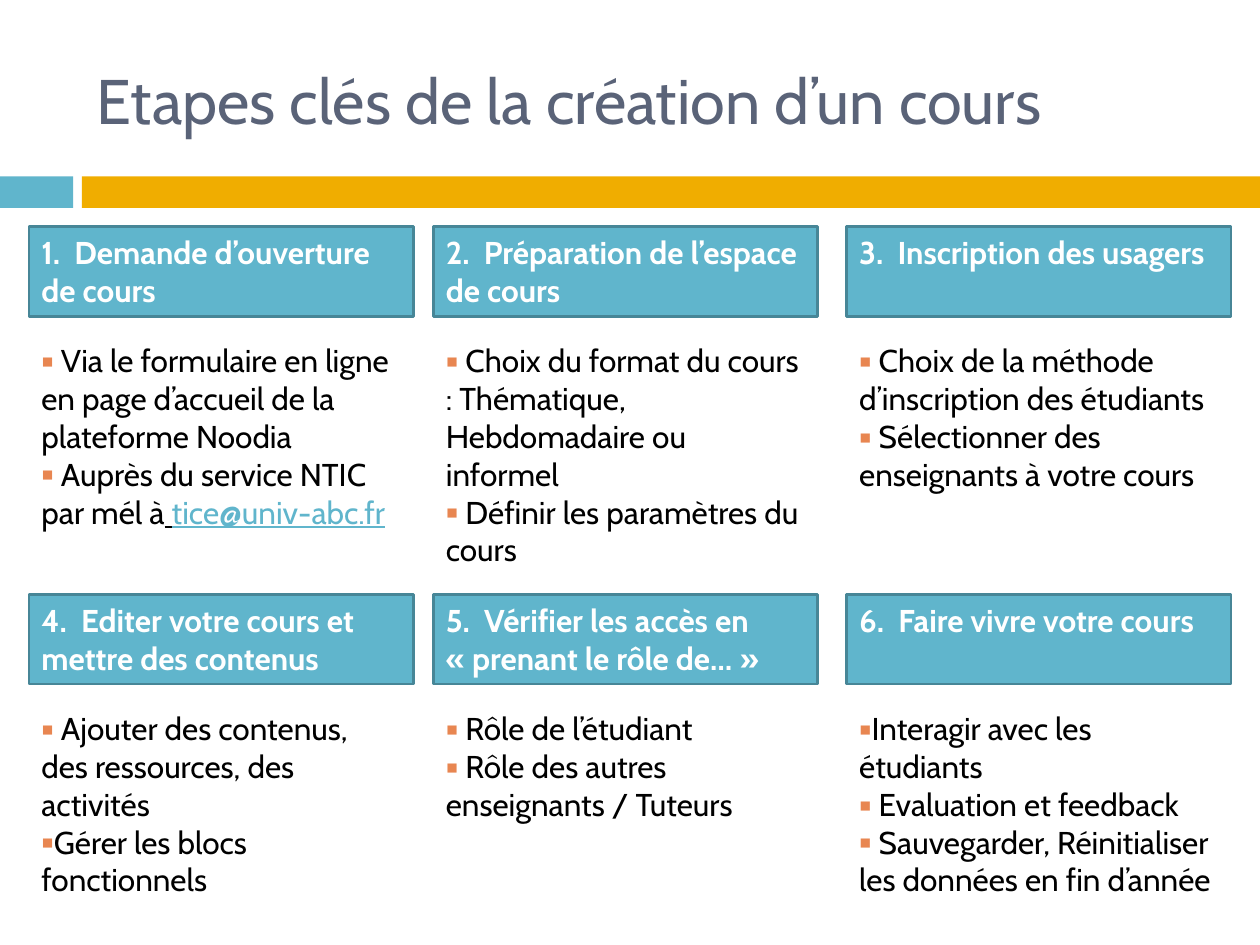
from lxml import etree
from pptx import Presentation
from pptx import util as u
from pptx.dml.color import RGBColor
from pptx.enum import shapes, text
from pptx.oxml.ns import qn

FONT = "Cabin"
COLORS = {
    "blue": "60B5CC", "blue_edge": "478697", "gold": "F0AD00",
    "title": "5A6378", "bullet": "E88651", "white": "FFFFFF", "black": "000000",
}
TITLE = "Etapes clés de la création d’un cours"
EMAIL = "tice@univ-abc.fr"

# Heading and bullet points of each step, in reading order
STEPS = [
    ("1.  Demande d’ouverture de cours",
     [" Via le formulaire en ligne en page d’accueil de la plateforme Noodia",
      " Auprès du service NTIC par mél à"]),
    ("2.  Préparation de l’espace de cours",
     [" Choix du format du cours : Thématique, Hebdomadaire ou informel",
      " Définir les paramètres du cours"]),
    ("3.  Inscription des usagers",
     [" Choix de la méthode d’inscription des étudiants",
      " Sélectionner des enseignants à votre cours"]),
    ("4.  Editer votre cours et mettre des contenus",
     [" Ajouter des contenus, des ressources, des activités",
      "Gérer les blocs fonctionnels"]),
    ("5.  Vérifier les accès en «\u00a0prenant le rôle de…\u00a0»",
     [" Rôle de l’étudiant",
      " Rôle des autres enseignants / Tuteurs"]),
    ("6.  Faire vivre votre cours",
     ["Interagir avec les étudiants",
      " Evaluation et feedback",
      " Sauvegarder, Réinitialiser les données en fin d’année"]),
]
COLUMN_LEFTS = [0.23, 3.44, 6.72]
ROW_TOPS = [1.8, 4.72]
COLUMN_WIDTH, HEADING_HEIGHT = 3.05, 0.71
BODY_OFFSET, BODY_HEIGHT = 0.86, 1.92


def rgb(name):
    return RGBColor.from_string(COLORS[name])


def add_text(paragraph, words, size=18, color="black", bold=False, underline=False):
    run = paragraph.add_run()
    run.text = words
    font = run.font
    font.name, font.size, font.bold = FONT, u.Pt(size), bold
    font.color.rgb = rgb(color)
    if underline:
        font.underline = True


def add_bullet(paragraph):
    """Give the paragraph a coloured square; wrapped lines return to the margin."""
    properties = paragraph._p.get_or_add_pPr()
    properties.set("marL", "0")
    properties.set("indent", "0")
    bullet_color = etree.SubElement(properties, qn("a:buClr"))
    etree.SubElement(bullet_color, qn("a:srgbClr"), val=COLORS["bullet"])
    etree.SubElement(properties, qn("a:buFont"), typeface=FONT)
    etree.SubElement(properties, qn("a:buChar"), char="▪")


def add_bar(slide, left, top, width, height, fill, edge=None):
    bar = slide.shapes.add_shape(
        shapes.MSO_SHAPE.RECTANGLE, *map(u.Inches, (left, top, width, height)))
    bar.shadow.inherit = False
    bar.fill.solid()
    bar.fill.fore_color.rgb = rgb(fill)
    if edge:
        bar.line.color.rgb = rgb(edge)
        bar.line.width = u.Pt(1.5)
    else:
        bar.line.fill.background()
    return bar


def add_frame(slide, left, top, width, height, anchor=text.MSO_ANCHOR.TOP):
    box = slide.shapes.add_textbox(*map(u.Inches, (left, top, width, height)))
    frame = box.text_frame
    frame.word_wrap = True
    frame.vertical_anchor = anchor
    return frame


def add_step(slide, left, top, heading, points):
    banner = add_bar(slide, left, top, COLUMN_WIDTH, HEADING_HEIGHT, "blue", "blue_edge")
    banner.text_frame.word_wrap = True
    banner.text_frame.vertical_anchor = text.MSO_ANCHOR.TOP
    label = banner.text_frame.paragraphs[0]
    label.alignment = text.PP_ALIGN.LEFT
    add_text(label, heading, color="white", bold=True)

    body = add_frame(slide, left, top + BODY_OFFSET, COLUMN_WIDTH, BODY_HEIGHT)
    for i, point in enumerate(points):
        paragraph = body.add_paragraph() if i else body.paragraphs[0]
        add_bullet(paragraph)
        add_text(paragraph, point)
    return body


def main():
    deck = Presentation()
    deck.slide_width, deck.slide_height = u.Inches(10), u.Inches(7.5)
    slide = deck.slides.add_slide(deck.slide_layouts[6])

    add_bar(slide, 0, 1.4, 0.58, 0.25, "blue")
    add_bar(slide, 0.65, 1.4, 9.35, 0.25, "gold")
    title = add_frame(slide, 0.67, 0.25, 8.92, 1.08, text.MSO_ANCHOR.MIDDLE)
    add_text(title.paragraphs[0], TITLE, size=36, color="title")

    bodies = []
    for i, (heading, points) in enumerate(STEPS):
        row, column = divmod(i, len(COLUMN_LEFTS))
        bodies.append(add_step(slide, COLUMN_LEFTS[column], ROW_TOPS[row], heading, points))

    contact = bodies[0].paragraphs[-1]
    add_text(contact, " ", underline=True)
    add_text(contact, EMAIL, color="blue", underline=True)

    deck.save("out.pptx")


if __name__ == "__main__":
    main()
